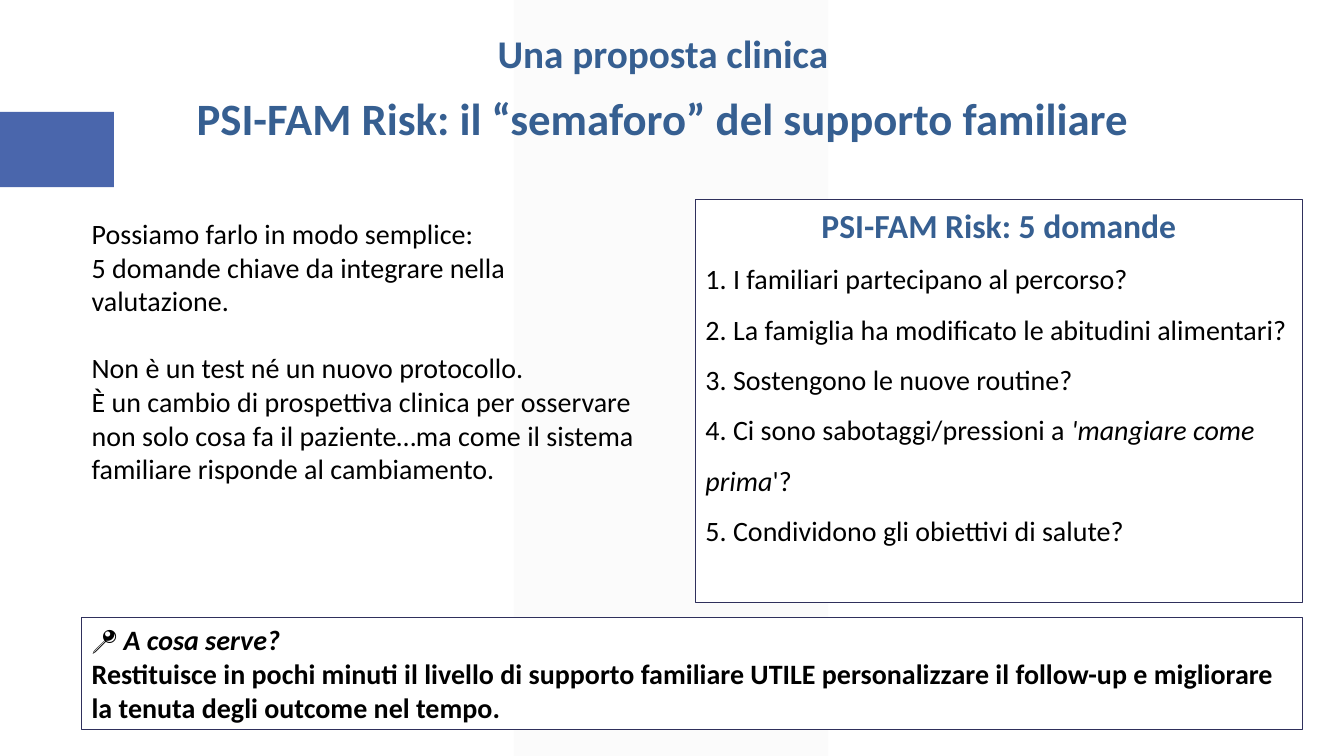
import pptx
import pptx.dml.color
import pptx.enum.shapes
import pptx.enum.text
import pptx.util
from lxml import etree
from pptx.oxml.ns import qn

Cm = pptx.util.Cm
Pt = pptx.util.Pt
SHAPES = pptx.enum.shapes.MSO_SHAPE
ALIGN = pptx.enum.text.PP_ALIGN

BLACK = pptx.dml.color.RGBColor(0x00, 0x00, 0x00)
WHITE = pptx.dml.color.RGBColor(0xFF, 0xFF, 0xFF)
HEADING_BLUE = pptx.dml.color.RGBColor(0x36, 0x5F, 0x91)
ACCENT_BLUE = pptx.dml.color.RGBColor(0x4A, 0x66, 0xAC)
BORDER_NAVY = pptx.dml.color.RGBColor(0x2F, 0x30, 0x5C)
BAND_GREY = pptx.dml.color.RGBColor(0xF2, 0xF2, 0xF2)

RIGHT_EDGE = 32.82
LEFT_EDGE = 2.06
QUESTIONS_LEFT = 17.53


def add_box(preset, left, top, width, height, fill, border=None):
    box = slide.shapes.add_shape(preset, Cm(left), Cm(top), Cm(width), Cm(height))
    box.shadow.inherit = False
    box.fill.solid()
    box.fill.fore_color.rgb = fill
    if border is None:
        box.line.fill.background()
    else:
        box.line.color.rgb = border
        box.line.width = Pt(0.75)
    return box


def write_paragraphs(shape, paragraphs):
    """Each paragraph is (paragraph format, colour, [(text, font format), ...])."""
    frame = shape.text_frame
    frame.word_wrap = True
    frame.vertical_anchor = pptx.enum.text.MSO_ANCHOR.TOP
    for number, (layout, colour, pieces) in enumerate(paragraphs):
        paragraph = frame.add_paragraph() if number else frame.paragraphs[0]
        for key, value in layout.items():
            setattr(paragraph, key, value)
        for text, style in pieces:
            for row, line in enumerate(text.split("\n")):
                if row:
                    paragraph.add_line_break()
                run = paragraph.add_run()
                run.text = line
                run.font.color.rgb = colour
                for key, value in ({"name": "Calibri"} | style).items():
                    setattr(run.font, key, value)


presentation = pptx.Presentation()
presentation.slide_width = Cm(33.87)
presentation.slide_height = Cm(19.05)
slide = presentation.slides.add_slide(presentation.slide_layouts[6])

# Background decoration
band = add_box(SHAPES.PARALLELOGRAM, 12.95, 0, 7.92, 19.05, BAND_GREY)
band.adjustments[0] = 0
band_colour = band.fill._xPr.find(qn("a:solidFill"))[0]
etree.SubElement(band_colour, qn("a:alpha")).set("val", "30000")
add_box(SHAPES.RECTANGLE, 0, 2.82, 2.87, 1.9, ACCENT_BLUE)

# Formats
body = {"size": Pt(20), "bold": False}
italic = body | {"italic": True}
strong = {"size": Pt(20), "bold": True}
left = {"alignment": ALIGN.LEFT}
centred = {"alignment": ALIGN.CENTER}
spaced = centred | {"space_after": Pt(10)}
question = left | {"line_spacing": 1.5}

title = slide.shapes.add_textbox(Cm(2.29), Cm(0.61), Cm(28.83), Cm(3.94))
write_paragraphs(title, [
    (spaced, HEADING_BLUE, [("Una proposta clinica", {"size": Pt(28), "bold": True})]),
    (spaced, HEADING_BLUE, [("PSI-FAM Risk: il “semaforo” del supporto familiare",
                             {"size": Pt(32), "bold": True})]),
])

questions = add_box(SHAPES.RECTANGLE, QUESTIONS_LEFT, 5.03,
                    RIGHT_EDGE - QUESTIONS_LEFT, 10.16, WHITE, BORDER_NAVY)
write_paragraphs(questions, [
    (centred, HEADING_BLUE, [("PSI-FAM Risk: 5 domande", {"size": Pt(24), "bold": True})]),
    (question, BLACK, [("1. I familiari partecipano al percorso?", body)]),
    (question, BLACK, [("2. La famiglia ha modificato le abitudini alimentari?", body)]),
    (question, BLACK, [("3. Sostengono le nuove routine?", body)]),
    (question, BLACK, [("4. Ci sono sabotaggi/pressioni a ", body),
                       ("'mangiare come prima", italic), ("'?", body)]),
    (question, BLACK, [("5. Condividono gli obiettivi di salute?", body)]),
])

proposal = slide.shapes.add_textbox(Cm(LEFT_EDGE), Cm(5.33), Cm(14.45), Cm(7.95))
write_paragraphs(proposal, [
    (left | {"space_after": Pt(24)}, BLACK, [
        ("Possiamo farlo in modo semplice:\n"
         "5 domande chiave da integrare nella valutazione.", body)]),
    (left, BLACK, [
        ("Non è un test né un nuovo protocollo.\n"
         "È un cambio di prospettiva clinica per osservare non solo cosa fa il paziente…"
         "ma come il sistema familiare risponde al cambiamento.", body)]),
])

purpose = add_box(SHAPES.RECTANGLE, LEFT_EDGE, 15.57,
                  RIGHT_EDGE - LEFT_EDGE, 2.82, WHITE, BORDER_NAVY)
write_paragraphs(purpose, [
    (left, BLACK, [("📍", strong), (" A cosa serve?", strong | {"italic": True})]),
    (left, BLACK, [
        ("Restituisce in pochi minuti il livello di supporto familiare UTILE personalizzare "
         "il follow-up e migliorare la tenuta degli outcome nel tempo.", strong)]),
])

presentation.save("out.pptx")
